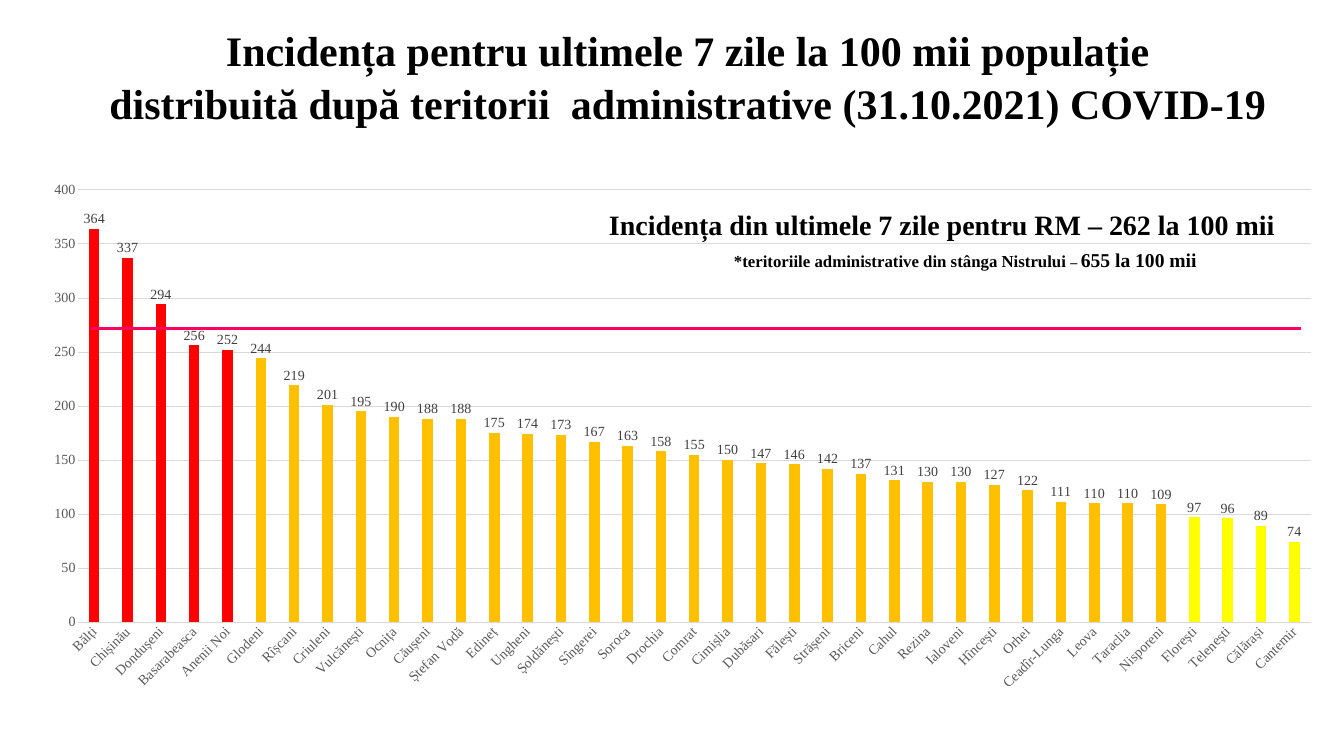
import dataclasses

import lxml.etree
import pptx
import pptx.chart.data
import pptx.dml.color
import pptx.enum.chart
import pptx.enum.shapes
import pptx.enum.text
import pptx.oxml
import pptx.oxml.ns
import pptx.util

Inches = pptx.util.Inches
Pt = pptx.util.Pt
qn = pptx.oxml.ns.qn


@dataclasses.dataclass(frozen=True)
class Theme:
    font: str = "Times New Roman"
    text: str = "000000"
    axis_text: str = "595959"
    label_text: str = "404040"
    grid: str = "D9D9D9"
    high: str = "FF0000"
    medium: str = "FFC000"
    low: str = "FFFF00"
    threshold: str = "FE0061"
    title_size: int = 60
    heading_size: int = 40
    note_size: int = 24
    note_value_size: int = 28
    chart_size: int = 20


THEME = Theme()
HIGH_FROM = 250
MEDIUM_FROM = 100

INCIDENCE = {
    "Bălți": 364, "Chișinău": 337, "Dondușeni": 294, "Basarabeasca": 256,
    "Anenii Noi": 252, "Glodeni": 244, "Rîșcani": 219, "Criuleni": 201,
    "Vulcănești": 195, "Ocnița": 190, "Căușeni": 188, "Ștefan Vodă": 188,
    "Edineț": 175, "Ungheni": 174, "Șoldănești": 173, "Sîngerei": 167,
    "Soroca": 163, "Drochia": 158, "Comrat": 155, "Cimișlia": 150,
    "Dubăsari": 147, "Fălești": 146, "Strășeni": 142, "Briceni": 137,
    "Cahul": 131, "Rezina": 130, "Ialoveni": 130, "Hîncești": 127,
    "Orhei": 122, "Ceadîr-Lunga": 111, "Leova": 110, "Taraclia": 110,
    "Nisporeni": 109, "Florești": 97, "Telenești": 96, "Călărași": 89,
    "Cantemir": 74,
}


def rgb(value):
    return pptx.dml.color.RGBColor.from_string(value)


def style_font(font, size, color, bold=False):
    font.name = THEME.font
    font.size = Pt(size)
    font.bold = bold
    font.color.rgb = rgb(color)


def style_line(line, color, width):
    line.color.rgb = rgb(color)
    line.width = Pt(width)


def add_title(slide, text):
    title = slide.shapes.title
    title.left, title.top = Inches(1.57), Inches(0.39)
    title.width, title.height = Inches(24.16), Inches(2.29)
    frame = title.text_frame
    frame.text = text
    frame.auto_size = pptx.enum.text.MSO_AUTO_SIZE.NONE
    frame.vertical_anchor = pptx.enum.text.MSO_ANCHOR.TOP
    paragraph = frame.paragraphs[0]
    paragraph.alignment = pptx.enum.text.PP_ALIGN.CENTER
    paragraph.line_spacing = 1.05
    for run in paragraph.runs:
        style_font(run.font, THEME.title_size, THEME.text, bold=True)


def add_caption(slide, left, top, width, height, parts):
    box = slide.shapes.add_textbox(Inches(left), Inches(top), Inches(width), Inches(height))
    box.text_frame.word_wrap = True
    paragraph = box.text_frame.paragraphs[0]
    paragraph.alignment = pptx.enum.text.PP_ALIGN.CENTER
    for text, size in parts:
        run = paragraph.add_run()
        run.text = text
        style_font(run.font, size, THEME.text, bold=True)


def set_plot_layout(chart, x, y, width, height):
    plot_area = chart._chartSpace.chart.plotArea
    for old in plot_area.findall(qn("c:layout")):
        plot_area.remove(old)
    layout = lxml.etree.Element(qn("c:layout"))
    manual = lxml.etree.SubElement(layout, qn("c:manualLayout"))
    settings = {"layoutTarget": "inner", "xMode": "edge", "yMode": "edge",
                "x": x, "y": y, "w": width, "h": height}
    for name, value in settings.items():
        lxml.etree.SubElement(manual, qn(f"c:{name}")).set("val", str(value))
    plot_area.insert(0, layout)


def style_axes(chart):
    no_tick = pptx.enum.chart.XL_TICK_MARK.NONE
    category_axis, value_axis = chart.category_axis, chart.value_axis
    for axis in (category_axis, value_axis):
        axis.major_tick_mark = axis.minor_tick_mark = no_tick
        style_font(axis.tick_labels.font, THEME.chart_size, THEME.axis_text)
    category_axis.has_major_gridlines = False
    style_line(category_axis.format.line, THEME.grid, 0.75)
    category_axis._element.find(qn("c:txPr")).find(qn("a:bodyPr")).set("rot", "-2700000")
    value_axis.minimum_scale, value_axis.maximum_scale = 0, 400
    value_axis.major_unit = 50
    value_axis.tick_labels.number_format = "0"
    value_axis.tick_labels.number_format_is_linked = False
    value_axis.format.line.fill.background()
    value_axis.has_major_gridlines = True
    style_line(value_axis.major_gridlines.format.line, THEME.grid, 0.75)


def level_color(value):
    if value >= HIGH_FROM:
        return THEME.high
    return THEME.medium if value >= MEDIUM_FROM else THEME.low


def style_columns(plot):
    plot.vary_by_categories = False
    plot.gap_width, plot.overlap = 219, -27
    series = plot.series[0]
    series.invert_if_negative = False
    series.format.fill.solid()
    series.format.fill.fore_color.rgb = rgb(THEME.medium)
    for index, value in enumerate(INCIDENCE.values()):
        color = level_color(value)
        if color != THEME.medium:
            fill = series.points[index].format.fill
            fill.solid()
            fill.fore_color.rgb = rgb(color)
    labels = series.data_labels
    labels.show_value = True
    labels.position = pptx.enum.chart.XL_LABEL_POSITION.OUTSIDE_END
    labels.number_format = "0"
    labels.number_format_is_linked = False
    style_font(labels.font, THEME.chart_size, THEME.label_text)


def add_incidence_chart(slide):
    data = pptx.chart.data.CategoryChartData(number_format="0")
    data.categories = list(INCIDENCE)
    data.add_series("Series 1", list(INCIDENCE.values()))
    chart = slide.shapes.add_chart(
        pptx.enum.chart.XL_CHART_TYPE.COLUMN_CLUSTERED,
        Inches(0.46), Inches(2.84), Inches(25.71), Inches(11.13), data).chart
    chart.has_legend = False
    chart.has_title = False
    style_font(chart.font, THEME.chart_size, THEME.text)
    set_plot_layout(chart, 0.042, 0.083, 0.952, 0.771)
    style_axes(chart)
    style_columns(chart.plots[0])


def add_threshold(slide, left, right, y):
    line = slide.shapes.add_connector(
        pptx.enum.shapes.MSO_CONNECTOR.STRAIGHT,
        Inches(left), Inches(y), Inches(right), Inches(y))
    style_line(line.line, THEME.threshold, 4.5)
    lxml.etree.SubElement(line._element.spPr, qn("a:effectLst"))


def main():
    presentation = pptx.Presentation()
    presentation.slide_width, presentation.slide_height = Inches(26.67), Inches(15)
    slide = presentation.slides.add_slide(presentation.slide_layouts[5])
    add_incidence_chart(slide)
    add_title(slide, "Incidența pentru ultimele 7 zile la 100 mii populație\v"
                     "distribuită după teritorii  administrative (31.10.2021) COVID-19")
    add_caption(slide, 11.77, 4.07, 13.84, 0.77, [
        ("Incidența din ultimele 7 zile pentru RM – 262 la 100 mii", THEME.heading_size)])
    add_caption(slide, 12.49, 4.86, 13.33, 0.57, [
        ("*teritoriile administrative din stânga Nistrului ", THEME.note_size),
        ("– ", THEME.chart_size),
        ("655 la 100 mii", THEME.note_value_size)])
    add_threshold(slide, 1.8, 25.81, 6.51)
    presentation.save("out.pptx")


if __name__ == "__main__":
    main()
